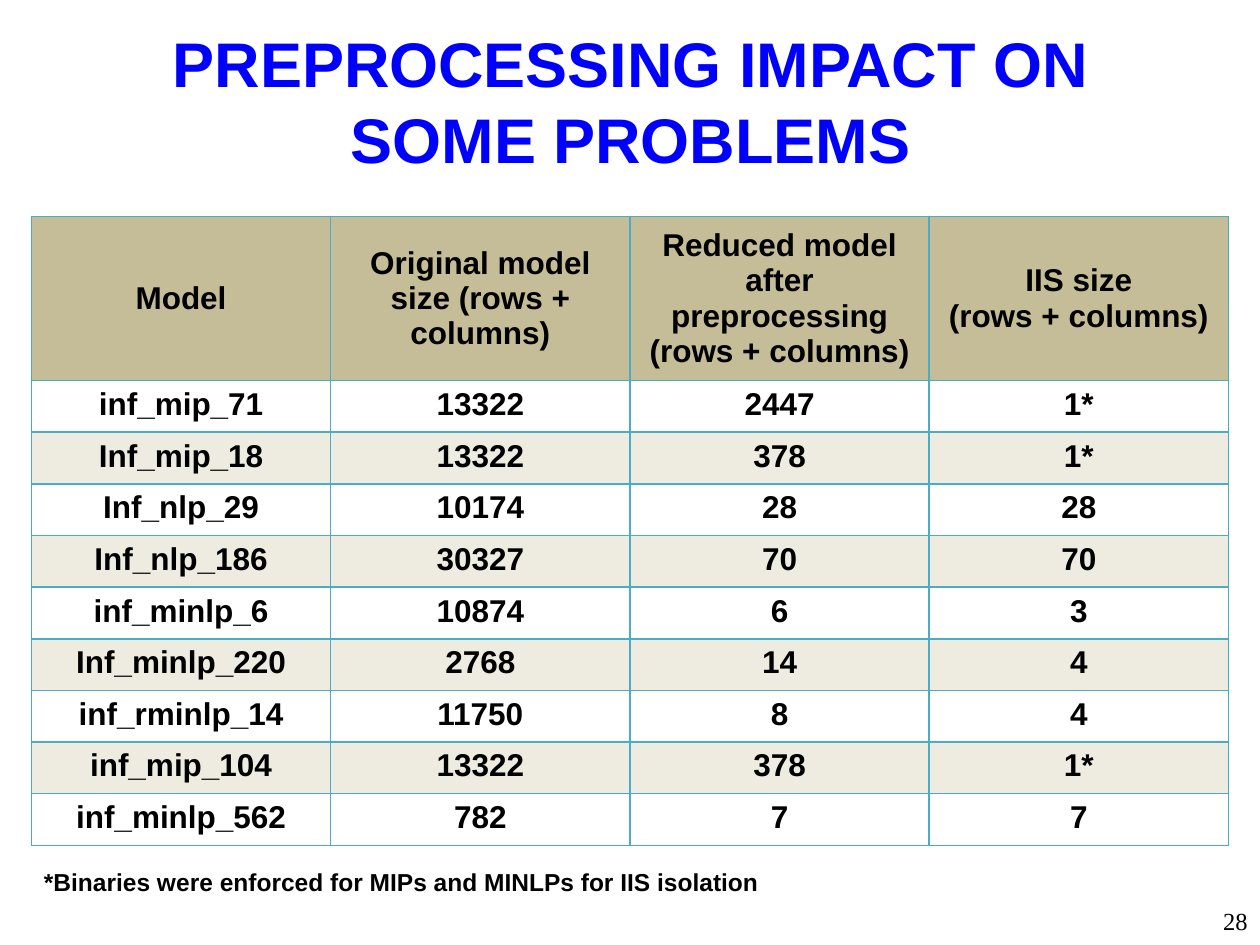
"""Build the slide on how preprocessing shrinks infeasible models."""
import dataclasses
import typing

import pptx
import pptx.dml.color
import pptx.enum.text
import pptx.oxml
import pptx.oxml.ns
import pptx.util

Inches = pptx.util.Inches
Align = pptx.enum.text.PP_ALIGN
Anchor = pptx.enum.text.MSO_ANCHOR


@dataclasses.dataclass(frozen=True)
class Theme:
    """Hold the colours, fonts and type sizes."""

    title_color: str = "0000FF"
    text_color: str = "000000"
    header_fill: str = "C4BD97"
    row_fills: tuple[str, str] = ("FFFFFF", "EEECE1")
    border_color: str = "4BACC6"
    border_width: float = 1
    sans: str = "Arial"
    serif: str = "Times New Roman"
    title_size: int = 36
    table_size: int = 18
    small_size: int = 14


@dataclasses.dataclass(frozen=True)
class Box:
    """Give a position and size in inches."""

    left: float
    top: float
    width: float
    height: float

    def lengths(self) -> dict[str, int]:
        """Return the four values as lengths."""
        return {name: Inches(value) for name, value in dataclasses.asdict(self).items()}


class ModelResult(typing.NamedTuple):
    """Describe one row of the table."""

    model: str
    original_size: str
    reduced_size: str
    iis_size: str


THEME = Theme()
TITLE_BOX = Box(0.67, 0.17, 8.67, 1.25)
TABLE_BOX = Box(0.25, 1.72, 9.5, 4.91)
NOTE_BOX = Box(0.25, 6.83, 9, 0.34)
NUMBER_BOX = Box(9, 7.17, 1, 0.33)
HEADER_HEIGHT = 1.22
ROW_HEIGHT = 0.41
HEADER = ModelResult(
    "Model",
    "Original model size (rows + columns)",
    "Reduced model after preprocessing (rows + columns)",
    "IIS size\n(rows + columns)",
)
RESULTS = [
    ModelResult("inf_mip_71", "13322", "2447", "1*"),
    ModelResult("Inf_mip_18", "13322", "378", "1*"),
    ModelResult("Inf_nlp_29", "10174", "28", "28"),
    ModelResult("Inf_nlp_186", "30327", "70", "70"),
    ModelResult("inf_minlp_6", "10874", "6", "3"),
    ModelResult("Inf_minlp_220", "2768", "14", "4"),
    ModelResult("inf_rminlp_14", "11750", "8", "4"),
    ModelResult("inf_mip_104", "13322", "378", "1*"),
    ModelResult("inf_minlp_562", "782", "7", "7"),
]


def set_values(target: typing.Any, values: dict[str, typing.Any]) -> None:
    """Set each named attribute on the target."""
    for name, value in values.items():
        setattr(target, name, value)


def write_text(frame: typing.Any, text: str, size: int, color: str = THEME.text_color,
               family: str = THEME.sans, bold: bool = True,
               paragraph_format: dict[str, typing.Any] | None = None) -> None:
    """Fill a text frame and format every paragraph and run."""
    frame.text = text
    for paragraph in frame.paragraphs:
        set_values(paragraph, paragraph_format or {})
        for run in paragraph.runs:
            set_values(run.font, {"name": family, "size": pptx.util.Pt(size), "bold": bold})
            run.font.color.rgb = pptx.dml.color.RGBColor.from_string(color)


def add_label(slide: typing.Any, box: Box, text: str, **text_format: typing.Any) -> None:
    """Add a wrapped text box in the small type size."""
    frame = slide.shapes.add_textbox(**box.lengths()).text_frame
    frame.word_wrap = True
    write_text(frame, text, THEME.small_size, **text_format)


def fill_cell(cell: typing.Any, color: str) -> None:
    """Draw the four borders of a cell and fill it."""
    properties = cell._tc.get_or_add_tcPr()
    width = pptx.util.Pt(THEME.border_width)
    for side in ("lnL", "lnR", "lnT", "lnB"):
        properties.append(pptx.oxml.parse_xml(
            f'<a:{side} {pptx.oxml.ns.nsdecls("a")} w="{width}"><a:solidFill>'
            f'<a:srgbClr val="{THEME.border_color}"/></a:solidFill></a:{side}>'))
    cell.fill.solid()
    cell.fill.fore_color.rgb = pptx.dml.color.RGBColor.from_string(color)


def add_results_table(slide: typing.Any) -> None:
    """Add the table with a header and alternating row fills."""
    rows = [HEADER, *RESULTS]
    table = slide.shapes.add_table(len(rows), len(HEADER), **TABLE_BOX.lengths()).table
    for column in table.columns:
        column.width = Inches(TABLE_BOX.width / len(HEADER))
    for row_index, result in enumerate(rows):
        is_header = row_index == 0
        table.rows[row_index].height = Inches(HEADER_HEIGHT if is_header else ROW_HEIGHT)
        color = THEME.header_fill if is_header else THEME.row_fills[(row_index - 1) % 2]
        for column_index, text in enumerate(result):
            cell = table.cell(row_index, column_index)
            cell.vertical_anchor = Anchor.MIDDLE if is_header else Anchor.TOP
            write_text(cell.text_frame, text, THEME.table_size,
                       paragraph_format={"alignment": Align.CENTER})
            fill_cell(cell, color)


def main() -> None:
    """Build and save the presentation."""
    presentation = pptx.Presentation()
    set_values(presentation, {"slide_width": Inches(10), "slide_height": Inches(7.5)})
    slide = presentation.slides.add_slide(presentation.slide_layouts.get_by_name("Title Only"))
    title = slide.shapes.title
    set_values(title, TITLE_BOX.lengths())
    set_values(title.text_frame, {"vertical_anchor": Anchor.MIDDLE, "word_wrap": True})
    write_text(title.text_frame, "PREPROCESSING IMPACT ON SOME PROBLEMS", THEME.title_size,
               THEME.title_color, paragraph_format={"alignment": Align.CENTER})
    add_label(slide, NUMBER_BOX, "28", family=THEME.serif, bold=False,
              paragraph_format={"alignment": Align.RIGHT, "line_spacing": 0.9})
    add_results_table(slide)
    add_label(slide, NOTE_BOX, "*Binaries were enforced for MIPs and MINLPs for IIS isolation")
    presentation.save("out.pptx")


if __name__ == "__main__":
    main()
